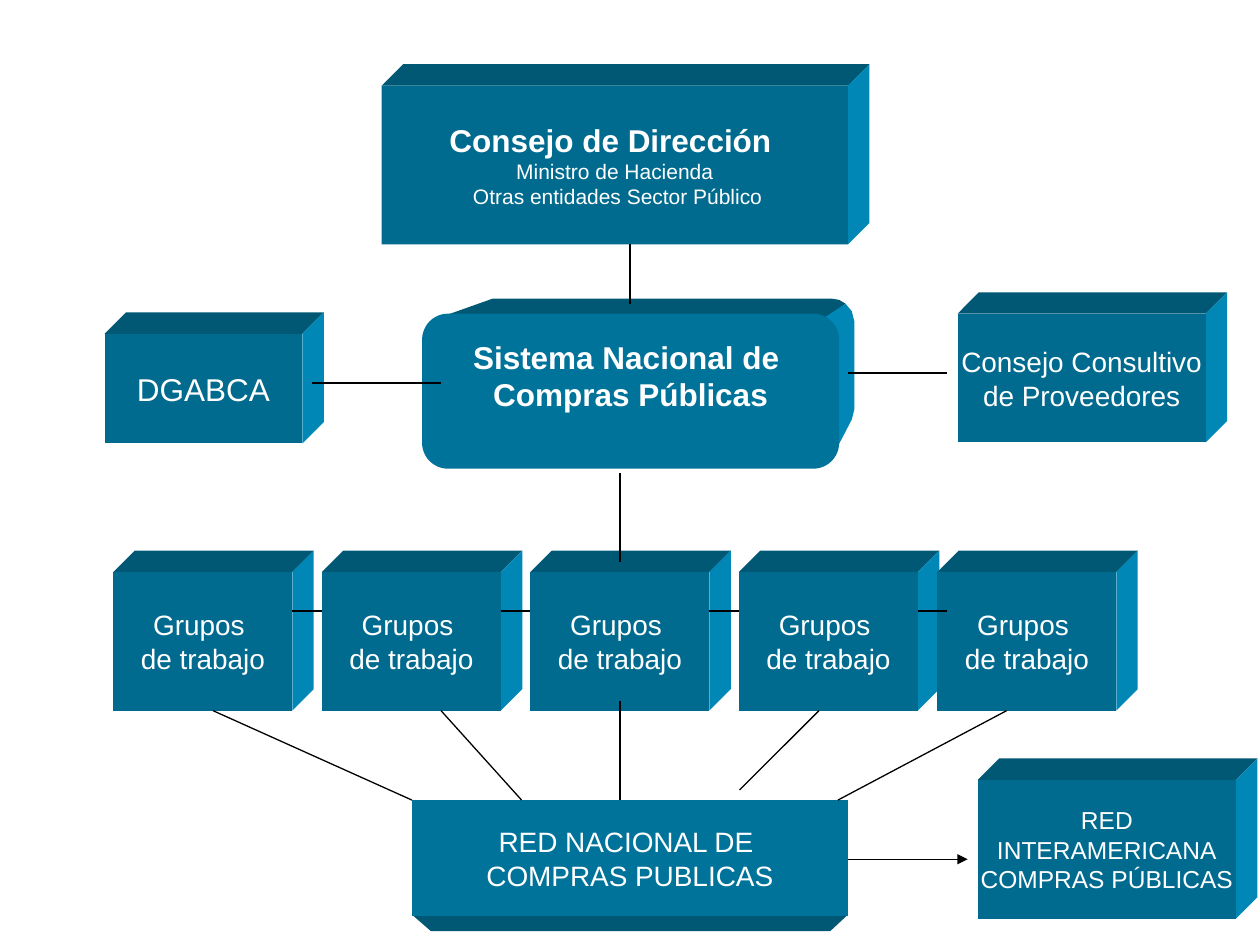
from dataclasses import dataclass

import pptx
import pptx.dml.color
import pptx.enum.shapes
import pptx.enum.text
import pptx.oxml.ns
import pptx.util
from lxml import etree

Inches = pptx.util.Inches
Shapes = pptx.enum.shapes.MSO_SHAPE

FRONT, BRIGHT_FRONT, TOP, SIDE = "006B8F", "00739B", "005875", "0087B5"
DEPTH = 0.17


@dataclass
class Line:
    text: str
    size: int
    bold: bool = False


@dataclass
class Block:
    left: float
    top: float
    width: float
    height: float
    lines: list[Line]
    color: str = FRONT
    preset: int = Shapes.FLOWCHART_PROCESS
    bottom_inset: float = 0.05


def rgb(value: str) -> pptx.dml.color.RGBColor:
    return pptx.dml.color.RGBColor.from_string(value)


def paint(shape, color: str) -> None:
    shape.shadow.inherit = False
    shape.fill.solid()
    shape.fill.fore_color.rgb = rgb(color)
    shape.line.fill.background()


def add_face(page, points: list[tuple[float, float]], color: str) -> None:
    start, *rest = [(Inches(x), Inches(y)) for x, y in points]
    builder = page.shapes.build_freeform(*start)
    builder.add_line_segments(rest, close=True)
    paint(builder.convert_to_shape(), color)


def add_block(page, block: Block) -> None:
    shape = page.shapes.add_shape(
        block.preset, Inches(block.left), Inches(block.top),
        Inches(block.width), Inches(block.height))
    paint(shape, block.color)
    frame = shape.text_frame
    frame.word_wrap = False
    frame.vertical_anchor = pptx.enum.text.MSO_ANCHOR.MIDDLE
    frame.margin_bottom = Inches(block.bottom_inset)
    for index, line in enumerate(block.lines):
        para = frame.add_paragraph() if index else frame.paragraphs[0]
        para.alignment = pptx.enum.text.PP_ALIGN.CENTER
        span = para.add_run()
        span.text = line.text
        span.font.name = "Arial"
        span.font.size = pptx.util.Pt(line.size)
        span.font.bold = line.bold
        span.font.color.rgb = rgb("FFFFFF")


def add_cube(page, block: Block) -> None:
    left, top = block.left, block.top
    right, bottom = left + block.width, top + block.height
    back_corner = (right + DEPTH, top - DEPTH)
    add_face(page, [(left, top), (left + DEPTH, top - DEPTH), back_corner, (right, top)], TOP)
    add_face(page, [(right, top), back_corner, (right + DEPTH, bottom - DEPTH),
                    (right, bottom)], SIDE)
    add_block(page, block)


def add_line(page, x1: float, y1: float, x2: float, y2: float, arrow: bool = False) -> None:
    line = page.shapes.add_connector(
        pptx.enum.shapes.MSO_CONNECTOR.STRAIGHT,
        Inches(x1), Inches(y1), Inches(x2), Inches(y2))
    line.line.color.rgb = rgb("000000")
    line.line.width = pptx.util.Pt(0.75)
    properties = line.element.spPr
    if arrow:
        etree.SubElement(line.line._get_or_add_ln(), pptx.oxml.ns.qn("a:tailEnd"),
                         type="triangle")
    etree.SubElement(properties, pptx.oxml.ns.qn("a:effectLst"))


def main() -> None:
    deck = pptx.Presentation()
    deck.slide_width, deck.slide_height = Inches(10), Inches(7.5)
    page = deck.slides.add_slide(deck.slide_layouts[6])

    # Governing council
    add_cube(page, Block(3.03, 0.68, 3.7, 1.26, [
        Line("Consejo de Dirección ", 18, True),
        Line("Ministro de Hacienda", 12),
        Line(" Otras entidades Sector Público", 12)], preset=Shapes.RECTANGLE))

    # National system: rounded block with its depth
    add_face(page, [(3.46, 2.53), (3.91, 2.37), (6.6, 2.37), (6.66, 2.38),
                    (6.71, 2.41), (6.55, 2.55)], TOP)
    add_face(page, [(6.5, 2.55), (6.71, 2.41), (6.76, 2.47), (6.78, 2.55),
                    (6.78, 3.25), (6.76, 3.33), (6.62, 3.6), (6.5, 3.5)], SIDE)
    add_block(page, Block(3.35, 2.49, 3.31, 1.23, [
        Line("Sistema Nacional de ", 18, True), Line("Compras Públicas", 18, True)],
        BRIGHT_FRONT, Shapes.ROUNDED_RECTANGLE, 0.3))

    # Side bodies
    add_cube(page, Block(0.83, 2.65, 1.57, 0.87, [Line("DGABCA", 18)]))
    add_cube(page, Block(7.6, 2.49, 1.97, 1.02, [
        Line("Consejo Consultivo", 16), Line("de Proveedores", 16)]))

    # Working groups
    first, step, group_width = 0.9, 1.655, 1.42
    for left in [first + step * index for index in range(4)] + [7.44]:
        add_cube(page, Block(left, 4.54, group_width, 1.1, [
            Line("Grupos ", 16), Line("de trabajo", 16)]))
    for index in range(4):
        start = first + group_width + step * index
        add_line(page, start, 4.85, first + step * (index + 1), 4.85)

    # Networks
    add_face(page, [(3.27, 7.26), (6.73, 7.26), (6.59, 7.39), (3.42, 7.39)], TOP)
    add_block(page, Block(3.27, 6.35, 3.46, 0.92, [
        Line("RED NACIONAL DE ", 16), Line("COMPRAS PUBLICAS", 16)], BRIGHT_FRONT))
    add_cube(page, Block(7.76, 6.19, 2.05, 1.1, [
        Line("RED", 14), Line("INTERAMERICANA", 14), Line("COMPRAS PÚBLICAS", 14)]))

    # Lines from the groups to the national network
    for ends in [(1.69, 5.64, 3.27, 6.35), (3.5, 5.64, 4.14, 6.35), (4.92, 5.56, 4.92, 6.35),
                 (6.5, 5.64, 5.87, 6.27), (6.65, 6.35, 7.99, 5.64)]:
        add_line(page, *ends)

    # Lines around the national system
    for ends in [(5, 1.94, 5, 2.41), (4.92, 3.75, 4.92, 4.46),
                 (3.5, 3.04, 2.48, 3.04), (7.52, 2.96, 6.73, 2.96)]:
        add_line(page, *ends)
    add_line(page, 6.73, 6.82, 7.68, 6.82, arrow=True)

    deck.save("out.pptx")


if __name__ == "__main__":
    main()
